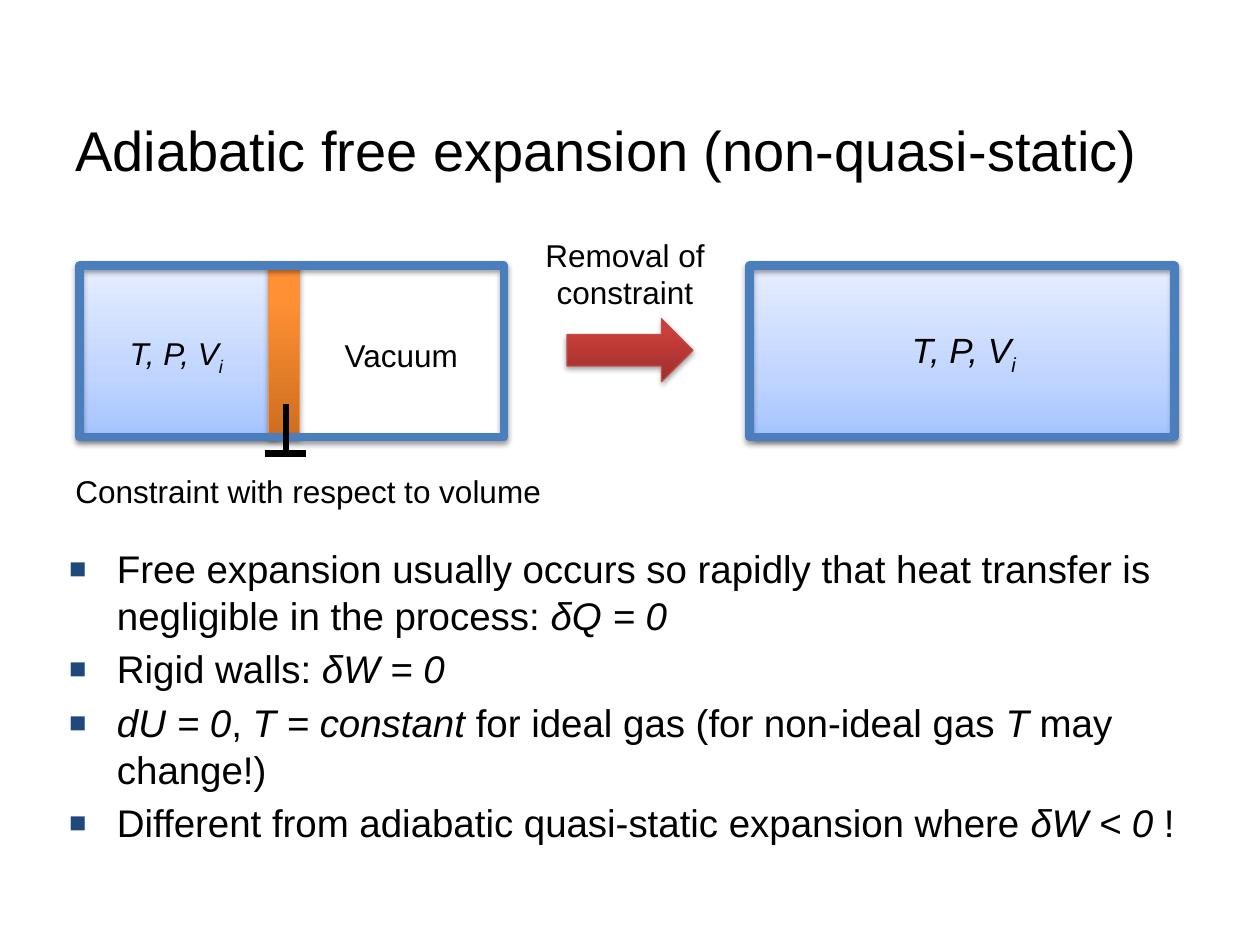
from lxml import etree
from pptx import Presentation
from pptx.dml.color import RGBColor
from pptx.enum.shapes import MSO_CONNECTOR, MSO_SHAPE
from pptx.enum.text import MSO_ANCHOR, PP_ALIGN
from pptx.oxml.ns import qn
from pptx.util import Inches, Pt

RECTANGLE, ARROW = MSO_SHAPE.RECTANGLE, MSO_SHAPE.RIGHT_ARROW
STRAIGHT = MSO_CONNECTOR.STRAIGHT
TOP, MIDDLE = MSO_ANCHOR.TOP, MSO_ANCHOR.MIDDLE
LEFT, CENTER = PP_ALIGN.LEFT, PP_ALIGN.CENTER

COLORS = {"text": "000000", "frame": "4B7EBC", "bullet": "1F497D",
          "piston": "F69240", "arrow": "BF4C48"}
GRADIENTS = {
    "gas": [(0, "A4C4FF"), (35, "BFD4FF"), (100, "E6EEFF")],
    "piston": [(0, "CC6E20"), (80, "FF9034"), (100, "FF9136")],
    "arrow": [(0, "9C2F2D"), (80, "CB3E3A"), (100, "CE3B37")],
}
STATE = [("T, P, V", "italic"), ("i", "subscript")]
POINTS = [
    [("Free expansion usually occurs so rapidly that heat transfer is "
      "negligible in the process: ", ""), ("δQ = 0", "italic")],
    [("Rigid walls: ", ""), ("δW = 0", "italic")],
    [("dU = 0", "italic"), (", ", ""), ("T = constant", "italic"),
     (" for ideal gas (for non-ideal gas ", ""), ("T", "italic"),
     (" may change!)", "")],
    [("Different from adiabatic quasi-static expansion where ", ""),
     ("δW < 0", "italic"), (" !", "")],
]


class SlideBuilder:
    """Draws styled elements on the current slide."""

    font_name = "Arial"

    def __init__(self, slide):
        self.slide = slide

    def color(self, name):
        return RGBColor.from_string(COLORS[name])

    def add_element(self, parent, tag, **attributes):
        values = {key: str(value) for key, value in attributes.items()}
        return etree.SubElement(parent, qn(tag), values)

    def add_spans(self, para, spans, size):
        for text, style in spans:
            span = para.add_run()
            span.text = text
            formats = {"name": self.font_name, "size": Pt(size), "italic": style != ""}
            for name, value in formats.items():
                setattr(span.font, name, value)
            span.font.color.rgb = self.color("text")
            if style == "subscript":
                span._r.get_or_add_rPr().set("baseline", "-25000")

    def text(self, place, spans, size, align=LEFT, anchor=TOP, wrap=True):
        box = self.slide.shapes.add_textbox(*map(Inches, place))
        frame = box.text_frame
        frame.word_wrap, frame.vertical_anchor = wrap, anchor
        frame.paragraphs[0].alignment = align
        self.add_spans(frame.paragraphs[0], spans, size)

    def bullets(self, place, points, size):
        frame = self.slide.shapes.add_textbox(*map(Inches, place)).text_frame
        frame.word_wrap = True
        for index, spans in enumerate(points):
            para = frame.add_paragraph() if index else frame.paragraphs[0]
            if index:
                para.space_before = Pt(size * 0.2)
            properties = para._p.get_or_add_pPr()
            properties.set("marL", str(Inches(0.38)))
            properties.set("indent", str(Inches(-0.38)))
            tint = self.add_element(properties, "a:buClr")
            self.add_element(tint, "a:srgbClr", val=COLORS["bullet"])
            self.add_element(properties, "a:buSzPct", val=75000)
            self.add_element(properties, "a:buFont", typeface=self.font_name)
            self.add_element(properties, "a:buChar", char="■")
            self.add_spans(para, spans, size)

    def shadow(self, shape, opacity, distance):
        shape.shadow.inherit = False
        effects = shape._element.spPr.find(qn("a:effectLst"))
        outer = self.add_element(effects, "a:outerShdw", blurRad=Pt(3.1),
                                 dist=Pt(distance), dir=5400000, rotWithShape=0)
        tint = self.add_element(outer, "a:srgbClr", val="000000")
        self.add_element(tint, "a:alpha", val=opacity * 1000)

    def shape(self, kind, place, gradient=None, line=None, width=0.75,
              opacity=38, distance=1.6, spans=(), size=20):
        shape = self.slide.shapes.add_shape(kind, *map(Inches, place))
        if gradient:
            shape.fill.gradient()
            shape.fill.gradient_angle = 90
            stops = shape._element.spPr.find(qn("a:gradFill")).find(qn("a:gsLst"))
            for stop in list(stops):
                stops.remove(stop)
            for position, value in GRADIENTS[gradient]:
                stop = self.add_element(stops, "a:gs", pos=position * 1000)
                self.add_element(stop, "a:srgbClr", val=value)
        else:
            shape.fill.background()
        if line:
            shape.line.color.rgb = self.color(line)
            shape.line.width = Pt(width)
        else:
            shape.line.fill.background()
        self.shadow(shape, opacity, distance)
        if spans:
            shape.text_frame.vertical_anchor = MIDDLE
            shape.text_frame.paragraphs[0].alignment = CENTER
            self.add_spans(shape.text_frame.paragraphs[0], spans, size)

    def line(self, start, end):
        line = self.slide.shapes.add_connector(STRAIGHT, *map(Inches, start + end))
        line.line.color.rgb = self.color("text")
        line.line.width = Pt(3.75)
        self.add_element(line._element.spPr, "a:effectLst")


def main():
    deck = Presentation()
    deck.slide_width, deck.slide_height = Inches(10), Inches(7.5)
    page = SlideBuilder(deck.slides.add_slide(deck.slide_layouts[6]))
    top, height, width = 2.11, 1.36, 3.37
    initial, final = 0.63, 5.95
    solid = {"opacity": 35, "distance": 1.8}

    page.text((0.5, 0.6, 9, 1.17),
              [("Adiabatic free expansion (non-quasi-static)", "")], 32, anchor=MIDDLE)
    page.shape(RECTANGLE, (initial, top, 1.58, height), "gas")
    page.text((0.93, 2.6, 1, 0.4), STATE, 18)
    page.shape(RECTANGLE, (2.13, top, 0.25, height), "piston", "piston", **solid)
    page.line((2.43, 3.6), (2.1, 3.6))
    page.text((0.5, 3.7, 3.93, 0.4),
              [("Constraint with respect to volume", "")], 18, wrap=False)
    page.shape(RECTANGLE, (5.98, 2.12, 3.34, height), "gas", spans=STATE)
    page.shape(ARROW, (4.5, 2.53, 1, 0.5), "arrow", "arrow", **solid)
    page.text((4.17, 1.82, 1.58, 0.71), [("Removal of constraint", "")], 18, CENTER)
    page.bullets((0.45, 4.28, 9.08, 2.74), POINTS, 22)
    for left in (final, initial):
        page.shape(RECTANGLE, (left, top, width, height), line="frame", width=5)
    page.line((2.27, 3.21), (2.27, 3.62))
    page.text((2.56, 2.62, 1.25, 0.4), [("Vacuum", "")], 18, CENTER)
    deck.save("out.pptx")


if __name__ == "__main__":
    main()
